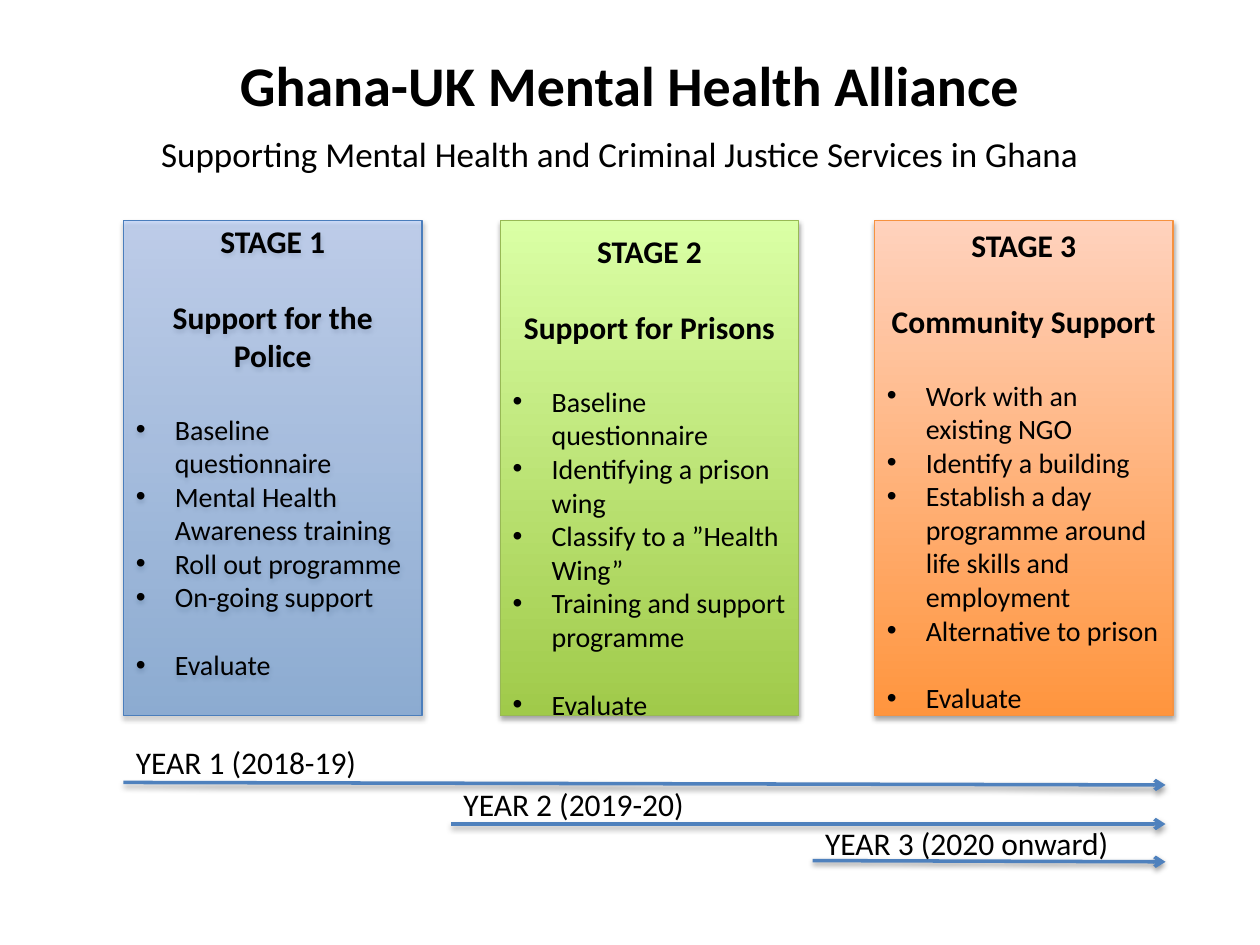
from dataclasses import dataclass

from lxml.etree import SubElement
from pptx import Presentation
from pptx.dml.color import RGBColor
from pptx.enum.shapes import MSO_CONNECTOR as Connector, MSO_SHAPE as Shape
from pptx.enum.text import MSO_ANCHOR as Anchor, PP_ALIGN as Align
from pptx.oxml.ns import qn
from pptx.util import Inches, Pt


@dataclass(frozen=True)
class Theme:
    font: str = "Calibri"
    text: str = "000000"
    arrow: str = "4F81BD"
    title: int = 32
    subtitle: int = 20
    heading: int = 18
    bullet: int = 16


@dataclass(frozen=True)
class Stage:
    left: float
    top_inset: float
    name: str
    focus: str
    steps: tuple[str, ...]
    bottom_color: str
    top_color: str
    outline: str
    opacity: int = 100


@dataclass(frozen=True)
class Year:
    label: str
    left: float
    label_top: float
    label_width: float
    start_y: float
    end_y: float


THEME = Theme()
PANEL_TOP, PANEL_WIDTH, PANEL_HEIGHT = 1.75, 2.37, 3.93
ARROW_END = 9.25
BULLET_INDENT = Inches(0.31)

STAGES = (
    Stage(0.98, 0.01, "STAGE 1", "Support for the Police",
          ("Baseline questionnaire", "Mental Health Awareness training",
           "Roll out programme", "On-going support", "Evaluate"),
          "3F80CE", "A4C4FF", "4B7EBC", opacity=48),
    Stage(3.97, 0.09, "STAGE 2", "Support for Prisons",
          ("Baseline questionnaire", "Identifying a prison wing",
           "Classify to a ”Health Wing”", "Training and support programme",
           "Evaluate"),
          "A0CA4A", "DAFFA5", "98B955"),
    Stage(6.94, 0.04, "STAGE 3", "Community Support",
          ("Work with an existing NGO", "Identify a building",
           "Establish a day programme around life skills and employment",
           "Alternative to prison", "Evaluate"),
          "FF953E", "FFD2BD", "F69240"),
)

YEARS = (
    Year("YEAR 1 (2018-19)", 0.98, 5.85, 2.83, 6.21, 6.23),
    Year("YEAR 2 (2019-20)", 3.58, 6.18, 2.43, 6.54, 6.54),
    Year("YEAR 3 (2020 onward)", 6.45, 6.49, 2.65, 6.83, 6.84),
)


def rgb(color: str) -> RGBColor:
    return RGBColor.from_string(color)


def format_runs(paragraph, size: int, bold: bool = False) -> None:
    for run in paragraph.runs:
        run.font.name = THEME.font
        run.font.size = Pt(size)
        run.font.bold = bold
        run.font.color.rgb = rgb(THEME.text)


def add_shadow(shape, opacity: int, distance: float) -> None:
    """Give the shape a soft black shadow straight below it."""
    effects = SubElement(shape._element.spPr, qn("a:effectLst"))
    shadow = SubElement(effects, qn("a:outerShdw"), blurRad=str(Pt(3.1)),
                        dist=str(Pt(distance)), dir="5400000", rotWithShape="0")
    black = SubElement(shadow, qn("a:srgbClr"), val="000000")
    SubElement(black, qn("a:alpha"), val=str(opacity * 1000))


def add_label(slide, text: str, left: float, top: float, width: float,
              height: float, size: int) -> None:
    frame = slide.shapes.add_textbox(
        Inches(left), Inches(top), Inches(width), Inches(height)).text_frame
    frame.word_wrap = True
    frame.text = text
    format_runs(frame.paragraphs[0], size)


def fill_panel(panel, stage: Stage) -> None:
    panel.fill.gradient()
    panel.fill.gradient_angle = 90
    colors = (stage.bottom_color, stage.top_color)
    for position, (stop, color) in enumerate(zip(panel.fill.gradient_stops, colors)):
        stop.position = position
        stop.color.rgb = rgb(color)
    if stage.opacity < 100:
        for color in panel._element.spPr.iter(qn("a:srgbClr")):
            SubElement(color, qn("a:alpha"), val=str(stage.opacity * 1000))
    panel.line.color.rgb = rgb(stage.outline)
    panel.line.width = Pt(0.75)


def make_bullet(paragraph) -> None:
    properties = paragraph._p.get_or_add_pPr()
    properties.set("marL", str(BULLET_INDENT))
    properties.set("indent", str(-BULLET_INDENT))
    SubElement(properties, qn("a:buFont"), typeface="Arial")
    SubElement(properties, qn("a:buChar"), char="•")


def add_stage(slide, stage: Stage) -> None:
    panel = slide.shapes.add_shape(
        Shape.RECTANGLE, Inches(stage.left), Inches(PANEL_TOP),
        Inches(PANEL_WIDTH), Inches(PANEL_HEIGHT))
    fill_panel(panel, stage)
    add_shadow(panel, opacity=35, distance=1.8)

    frame = panel.text_frame
    frame.word_wrap = True
    frame.vertical_anchor = Anchor.TOP
    frame.margin_top, frame.margin_bottom = Inches(stage.top_inset), 0
    frame.text = "\n".join((stage.name, stage.focus, *stage.steps))
    headings, steps = frame.paragraphs[:2], frame.paragraphs[2:]
    for heading in headings:
        heading.alignment = Align.CENTER
        heading.space_after = Pt(22)
        format_runs(heading, THEME.heading, bold=True)
    for step in steps:
        step.alignment = Align.LEFT
        format_runs(step, THEME.bullet)
    steps[-1].space_before = Pt(19.5)
    for step in steps:
        make_bullet(step)


def add_year_arrow(slide, year: Year) -> None:
    arrow = slide.shapes.add_connector(
        Connector.STRAIGHT, Inches(year.left), Inches(year.start_y),
        Inches(ARROW_END), Inches(year.end_y))
    arrow.line.color.rgb = rgb(THEME.arrow)
    arrow.line.width = Pt(2)
    SubElement(arrow.line._get_or_add_ln(), qn("a:tailEnd"), type="arrow")
    add_shadow(arrow, opacity=38, distance=1.6)


def add_title(slide, text: str) -> None:
    title = slide.shapes.title
    title.left, title.top = Inches(0.75), Inches(0.33)
    title.width, title.height = Inches(8.5), Inches(0.68)
    title.text_frame.text = text
    title.text_frame.vertical_anchor = Anchor.MIDDLE
    heading = title.text_frame.paragraphs[0]
    heading.alignment = Align.CENTER
    format_runs(heading, THEME.title, bold=True)


def main() -> None:
    deck = Presentation()
    deck.slide_width, deck.slide_height = Inches(10), Inches(7.5)
    slide = deck.slides.add_slide(deck.slide_layouts[5])
    add_title(slide, "Ghana-UK Mental Health Alliance")
    add_label(slide, "Supporting Mental Health and Criminal Justice Services in Ghana",
              1.18, 1, 7.91, 0.44, THEME.subtitle)
    for stage in STAGES:
        add_stage(slide, stage)
    for year in YEARS:
        add_year_arrow(slide, year)
    for year in YEARS:
        add_label(slide, year.label, year.left, year.label_top,
                  year.label_width, 0.4, THEME.heading)
    deck.save("out.pptx")


if __name__ == "__main__":
    main()
